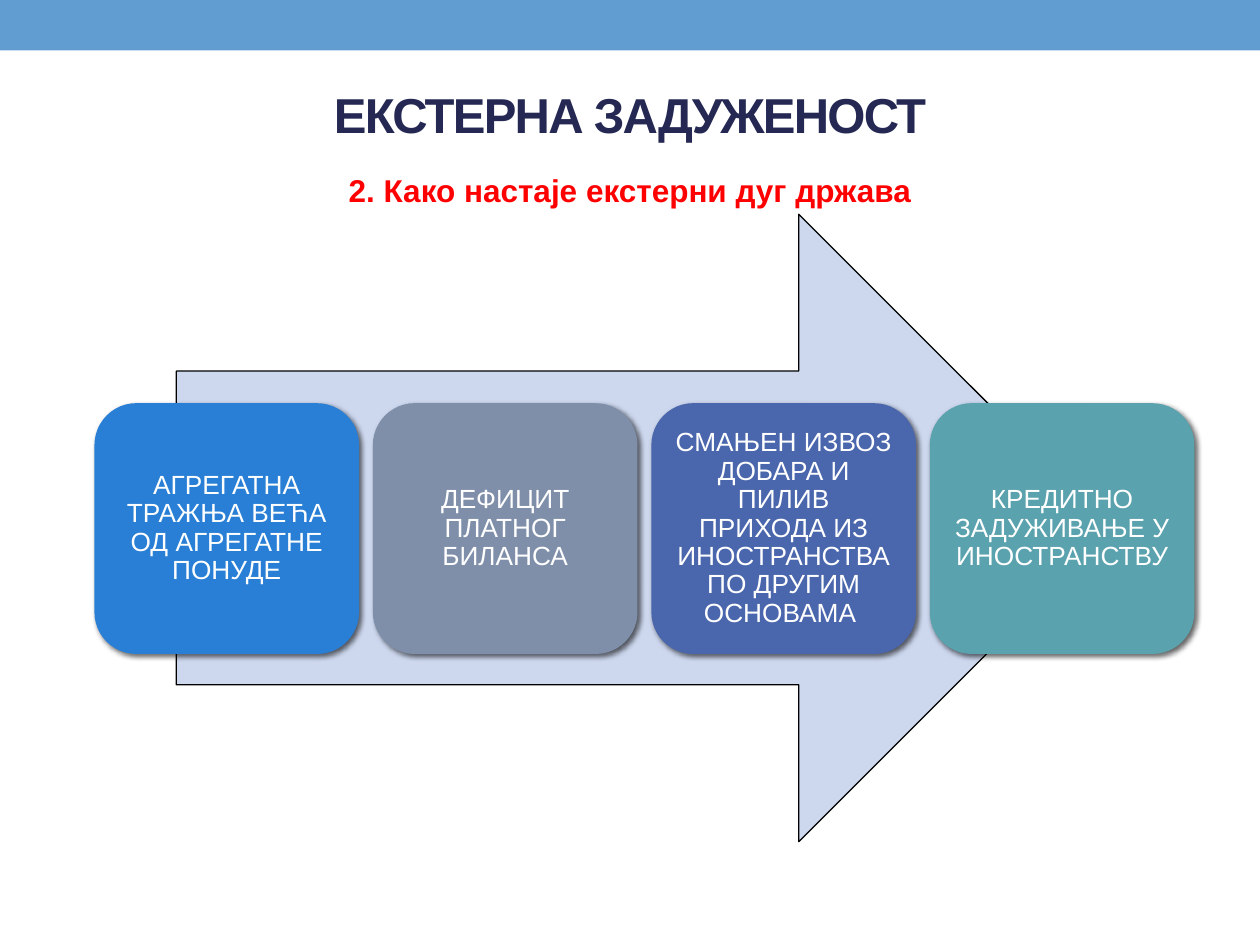
from dataclasses import dataclass

from lxml.etree import SubElement
from pptx import Presentation
from pptx.dml.color import RGBColor
from pptx.enum.shapes import MSO_SHAPE
from pptx.enum.text import MSO_ANCHOR, MSO_AUTO_SIZE, PP_ALIGN
from pptx.oxml.ns import qn
from pptx.shapes.autoshape import Shape
from pptx.slide import Slide
from pptx.text.text import TextFrame
from pptx.util import Inches, Pt


@dataclass
class Step:
    text: str
    color: str


STEPS = [
    Step("АГРЕГАТНА ТРАЖЊА ВЕЋА ОД АГРЕГАТНЕ ПОНУДЕ", "297FD5"),
    Step("ДЕФИЦИТ ПЛАТНОГ БИЛАНСА", "7F8FA9"),
    Step("СМАЊЕН ИЗВОЗ ДОБАРА И ПИЛИВ ПРИХОДА ИЗ ИНОСТРАНСТВА ПО ДРУГИМ ОСНОВАМА ", "4A66AC"),
    Step("КРЕДИТНО ЗАДУЖИВАЊЕ У ИНОСТРАНСТВУ", "5AA2AE"),
]
STEP_LEFT, STEP_TOP, STEP_WIDTH, STEP_HEIGHT = 0.75, 3.2, 2.1, 1.99
STEP_PITCH = 2.21
STEP_INSET = 0.06


def rgb(color: str) -> RGBColor:
    return RGBColor.from_string(color)


def write_text(frame: TextFrame, text: str, size: float, color: str,
               bold: bool = False, **paragraph_format: object) -> None:
    """Fill a frame with one centred paragraph."""
    frame.word_wrap = True
    frame.auto_size = MSO_AUTO_SIZE.NONE
    paragraph = frame.paragraphs[0]
    for name, value in {"alignment": PP_ALIGN.CENTER, **paragraph_format}.items():
        setattr(paragraph, name, value)
    run = paragraph.add_run()
    run.text = text
    for name, value in {"name": "Arial", "size": Pt(size), "bold": bold}.items():
        setattr(run.font, name, value)
    run.font.color.rgb = rgb(color)


def add_block(slide: Slide, kind: MSO_SHAPE, left: float, top: float,
              width: float, height: float, fill: str) -> Shape:
    """Add a flat shape with no outline."""
    shape = slide.shapes.add_shape(
        kind, Inches(left), Inches(top), Inches(width), Inches(height))
    shape.shadow.inherit = False
    shape.fill.solid()
    shape.fill.fore_color.rgb = rgb(fill)
    shape.line.fill.background()
    return shape


def add_drop_shadow(shape: Shape) -> None:
    """Cast a soft 60 % black shadow to the lower right."""
    effects = shape.element.spPr.find(qn("a:effectLst"))
    shadow = SubElement(effects, qn("a:outerShdw"), blurRad=str(Pt(3)),
                        dist=str(Pt(2)), dir="2700000", algn="ctr", rotWithShape="0")
    color = SubElement(shadow, qn("a:srgbClr"), val="000000")
    SubElement(color, qn("a:alpha"), val="60000")


def add_step(slide: Slide, index: int, step: Step) -> None:
    shape = add_block(slide, MSO_SHAPE.ROUNDED_RECTANGLE, STEP_LEFT + index * STEP_PITCH,
                      STEP_TOP, STEP_WIDTH, STEP_HEIGHT, step.color)
    add_drop_shadow(shape)
    frame = shape.text_frame
    for side in ("left", "right", "top", "bottom"):
        setattr(frame, f"margin_{side}", Inches(STEP_INSET))
    frame.vertical_anchor = MSO_ANCHOR.MIDDLE
    write_text(frame, step.text, 15, "FFFFFF", line_spacing=0.9)


def main() -> None:
    presentation = Presentation()
    presentation.slide_width, presentation.slide_height = Inches(10), Inches(7.5)
    slide = presentation.slides.add_slide(presentation.slide_layouts[5])

    # Top band
    add_block(slide, MSO_SHAPE.RECTANGLE, 0, 0, 10, 0.4, "629DD1")

    # Title with tightened letters
    title = slide.shapes.title
    title.left, title.top = Inches(0.5), Inches(0.58)
    title.width, title.height = Inches(9), Inches(0.65)
    title.text_frame.vertical_anchor = MSO_ANCHOR.MIDDLE
    write_text(title.text_frame, "ЕКСТЕРНА ЗАДУЖЕНОСТ", 28, "242852", bold=True)
    title.text_frame.paragraphs[0].runs[0].font._element.set("spc", "-100")

    # Subtitle
    subtitle = slide.shapes.add_textbox(Inches(0.5), Inches(1.31), Inches(9), Inches(5.77))
    write_text(subtitle.text_frame, "2. Како настаје екстерни дуг држава", 18, "FF0000",
               bold=True, space_before=Pt(3.6))

    # Arrow behind the steps
    arrow = add_block(slide, MSO_SHAPE.RIGHT_ARROW, 1.4, 1.7, 7.43, 4.98, "CDD8EF")
    arrow.line.color.rgb = rgb("000000")
    arrow.line.width = Pt(0.75)

    # Steps
    for index, step in enumerate(STEPS):
        add_step(slide, index, step)

    presentation.save("out.pptx")


if __name__ == "__main__":
    main()
